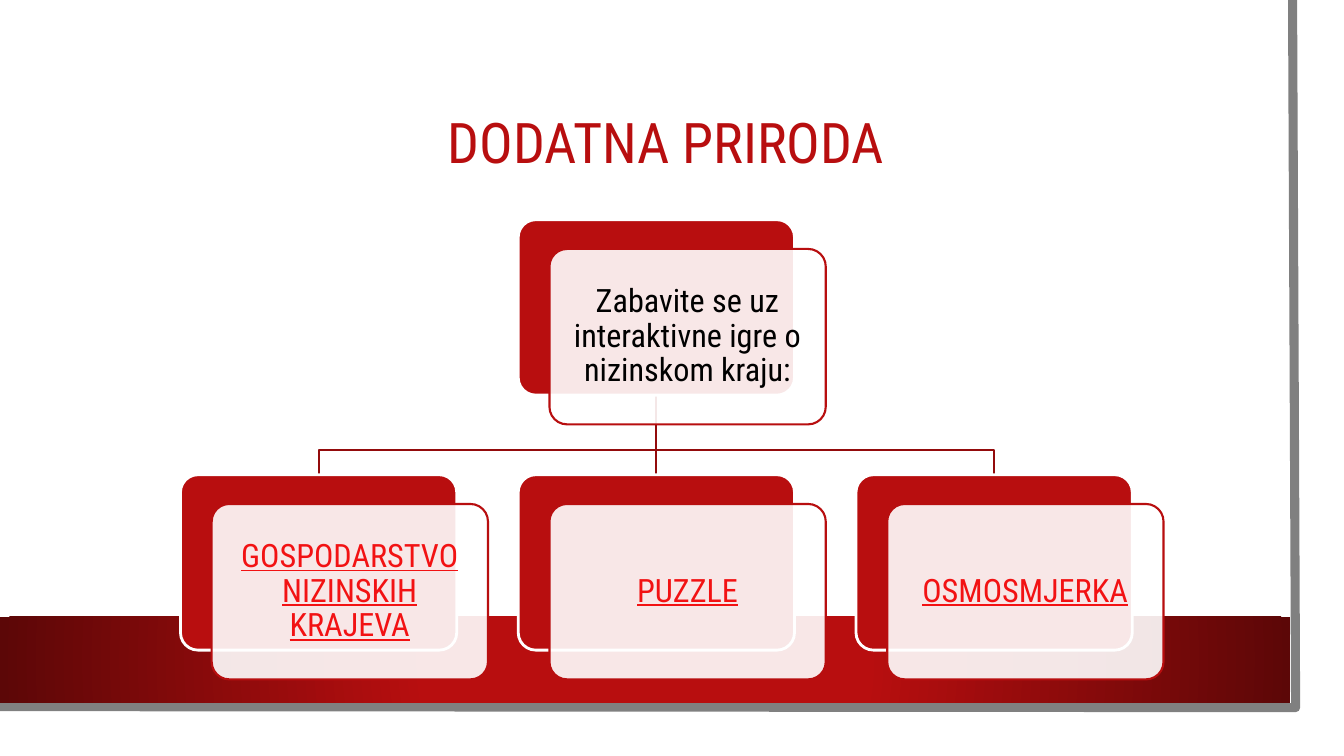
from lxml.etree import SubElement
from pptx import Presentation
from pptx.dml.color import RGBColor
from pptx.enum.shapes import MSO_CONNECTOR, MSO_SHAPE
from pptx.enum.text import MSO_ANCHOR, PP_ALIGN
from pptx.oxml import parse_xml
from pptx.oxml.ns import nsdecls, qn
from pptx.util import Inches, Pt

FONT = "Roboto Condensed"
RED = "B80E0F"
DARK_RED = "5C0707"
LINE_RED = "930B0C"
LINK_RED = "F21213"
WHITE = "FFFFFF"
BLACK = "000000"
GREY = "808080"

CARD_WIDTH, CARD_HEIGHT = 2.74, 1.74
CARD_OFFSET_X, CARD_OFFSET_Y = 0.31, 0.29
ROOT_LEFT, ROOT_TOP = 5.14, 2.18
CHILD_TOP = 4.71
CHILD_STEP = 3.35
BEND_Y = 4.46
GAMES = ["GOSPODARSTVO NIZINSKIH KRAJEVA", "PUZZLE", "OSMOSMJERKA"]


def color(value):
    return RGBColor.from_string(value)


def set_line(shape, value, width):
    shape.line.color.rgb = color(value)
    shape.line.width = Pt(width)


def add_text(shape, text, size, value, underline=False):
    frame = shape.text_frame
    frame.word_wrap = True
    frame.vertical_anchor = MSO_ANCHOR.MIDDLE
    frame.margin_left = frame.margin_right = Inches(0.1)
    frame.margin_top = frame.margin_bottom = Inches(0.1)
    para = frame.paragraphs[0]
    para.alignment = PP_ALIGN.CENTER
    para.line_spacing = 0.9
    span = para.add_run()
    span.text = text
    span.font.name = FONT
    span.font.size = Pt(size)
    span.font.color.rgb = color(value)
    span.font.underline = underline


def add_polyline(page, points, value, width):
    corners = [(Inches(x), Inches(y)) for x, y in points]
    builder = page.shapes.build_freeform(*corners[0], scale=1.0)
    builder.add_line_segments(corners[1:], close=False)
    shape = builder.convert_to_shape()
    shape.shadow.inherit = False
    shape.fill.background()
    set_line(shape, value, width)


def add_stem(page, x, top, bottom):
    stem = page.shapes.add_connector(
        MSO_CONNECTOR.STRAIGHT, Inches(x), Inches(top), Inches(x), Inches(bottom))
    set_line(stem, LINE_RED, 1.5)
    SubElement(stem._element.spPr, qn("a:effectLst"))


def add_band(page):
    band = page.shapes.add_shape(
        MSO_SHAPE.RECTANGLE, Inches(0), Inches(6.12), Inches(12.8), Inches(0.85))
    band.shadow.inherit = False
    band.line.fill.background()
    gradient = parse_xml(
        f'<a:gradFill {nsdecls("a")} rotWithShape="1"><a:gsLst>'
        f'<a:gs pos="34000"><a:srgbClr val="{RED}"/></a:gs>'
        f'<a:gs pos="100000"><a:srgbClr val="{DARK_RED}"/></a:gs></a:gsLst>'
        '<a:path path="circle"><a:fillToRect l="50000" t="50000" r="50000" b="50000"/>'
        '</a:path></a:gradFill>')
    band._element.spPr.find(qn("a:prstGeom")).addnext(gradient)


def add_panel(page, left, top, fill, line, width):
    panel = page.shapes.add_shape(
        MSO_SHAPE.ROUNDED_RECTANGLE, Inches(left), Inches(top),
        Inches(CARD_WIDTH), Inches(CARD_HEIGHT))
    panel.adjustments[0] = 0.1
    panel.shadow.inherit = False
    panel.fill.solid()
    panel.fill.fore_color.rgb = color(fill)
    set_line(panel, line, width)
    return panel


def add_card(page, left, top, text, value, underline=False):
    add_panel(page, left, top, RED, WHITE, 2)
    front = add_panel(page, left + CARD_OFFSET_X, top + CARD_OFFSET_Y, WHITE, RED, 1.5)
    fill_color = front._element.spPr.find(qn("a:solidFill"))[0]
    SubElement(fill_color, qn("a:alpha"), val="90000")
    add_text(front, text, 23, value, underline)


def add_title(page, text):
    box = page.shapes.add_textbox(Inches(1.86), Inches(0.87), Inches(9.49), Inches(1.15))
    add_text(box, text, 40, RED)


def add_branches(page):
    center = ROOT_LEFT + CARD_WIDTH / 2
    root_bottom = ROOT_TOP + CARD_HEIGHT
    for side in (1, -1):
        end = center + side * CHILD_STEP
        points = [(center, root_bottom), (center, BEND_Y), (end, BEND_Y), (end, CHILD_TOP)]
        add_polyline(page, points, LINE_RED, 1.5)
    add_stem(page, center, root_bottom, CHILD_TOP)


def main():
    deck = Presentation()
    deck.slide_width = Inches(13.33)
    deck.slide_height = Inches(7.5)
    page = deck.slides.add_slide(deck.slide_layouts[6])
    add_polyline(page, [(12.82, 0), (12.85, 7.02), (-0.03, 7.01)], GREY, 6.5)
    add_band(page)
    add_title(page, "DODATNA PRIRODA")
    add_branches(page)
    add_card(page, ROOT_LEFT, ROOT_TOP,
             "Zabavite se uz interaktivne igre o nizinskom kraju:", BLACK)
    for index, game in enumerate(GAMES):
        left = ROOT_LEFT + (index - 1) * CHILD_STEP
        add_card(page, left, CHILD_TOP, game, LINK_RED, underline=True)
    deck.save("out.pptx")


if __name__ == "__main__":
    main()
